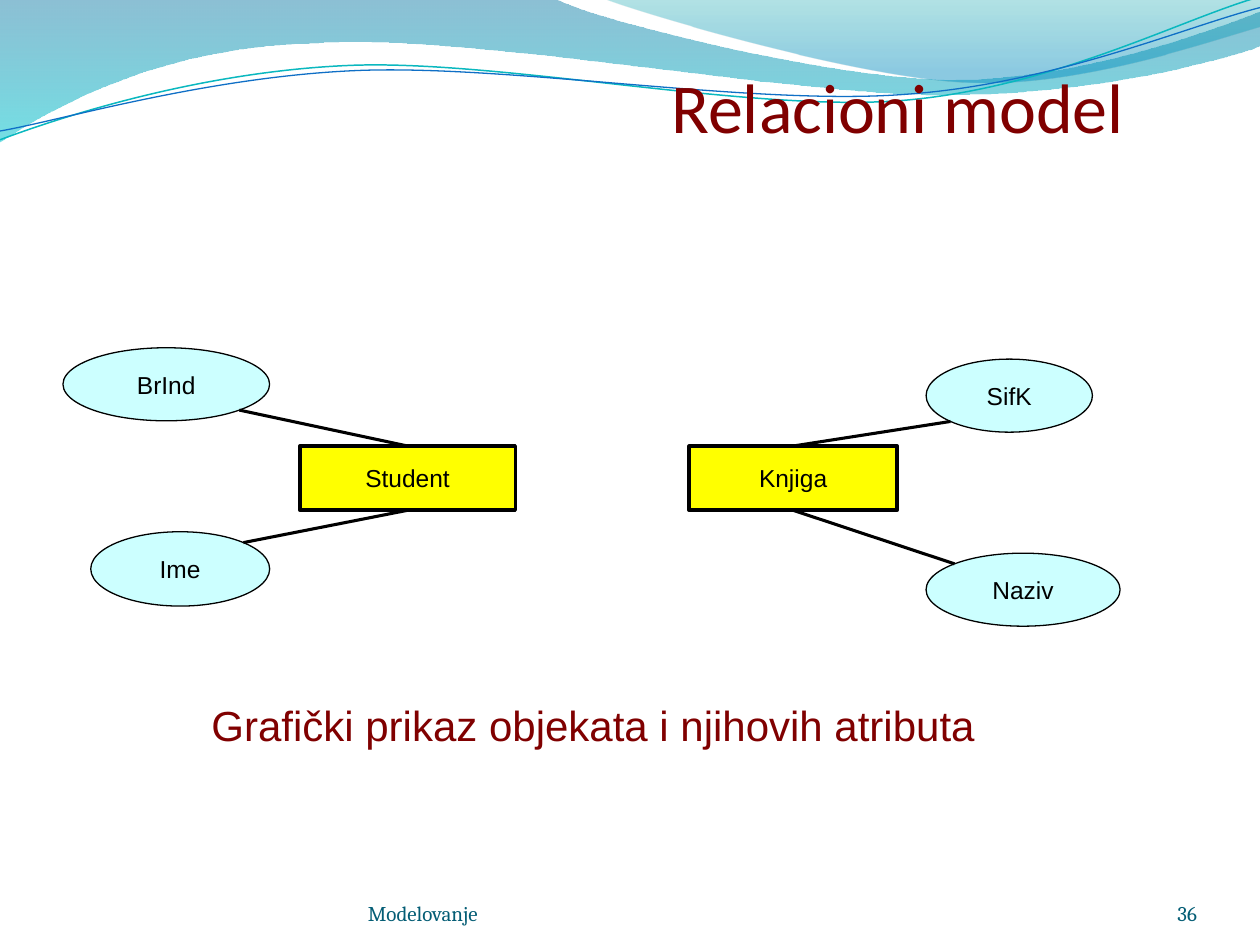
from math import cos, radians, sin, sqrt

from lxml import etree
from pptx import Presentation
from pptx.dml.color import RGBColor
from pptx.enum.shapes import MSO_CONNECTOR, MSO_SHAPE
from pptx.enum.text import MSO_ANCHOR, PP_ALIGN
from pptx.oxml.ns import qn
from pptx.util import Inches, Pt

RECTANGLE, ELLIPSE = MSO_SHAPE.RECTANGLE, MSO_SHAPE.OVAL
STRAIGHT = MSO_CONNECTOR.STRAIGHT
LEFT, CENTER, RIGHT = PP_ALIGN.LEFT, PP_ALIGN.CENTER, PP_ALIGN.RIGHT
MIDDLE, BOTTOM = MSO_ANCHOR.MIDDLE, MSO_ANCHOR.BOTTOM
TOP_SITE, BOTTOM_SITE = 0, 2
TILT = -2.7

BLACK = RGBColor(0x00, 0x00, 0x00)
MAROON = RGBColor(0x80, 0x00, 0x00)
TEAL = RGBColor(0x04, 0x5D, 0x75)
YELLOW = RGBColor(0xFF, 0xFF, 0x00)
PALE_CYAN = RGBColor(0xCC, 0xFF, 0xFF)
WAVE_BLUE = RGBColor(0x00, 0x74, 0xA1)
WAVE_CYAN = RGBColor(0x00, 0xC6, 0xCF)
WAVE_GREEN = RGBColor(0x00, 0xA1, 0xA9)
WAVE_SKY = RGBColor(0x00, 0x8B, 0xBF)
LINE_CYAN = RGBColor(0x0A, 0xB8, 0xBF)
LINE_BLUE = RGBColor(0x0F, 0x6F, 0xC6)

WAVES = [
    ((-0.01, -0.01, 10.02, 1.14),
     [(0, 0), (4.4, -0.01),
      (4.76, 0.17, 6.64, 0.63, 7.58, 0.63), (8.53, 0.63, 9.58, 0.26, 10, 0.09),
      (10.01, 0.36),
      (9.83, 0.44, 8.7, 0.76, 7.46, 0.75), (6.22, 0.75, 3.82, 0.28, 2.57, 0.34),
      (1.29, 0.36, 0.46, 0.83, -0.01, 1.13), (0, 0)],
     [(0, WAVE_BLUE, 45), (1, WAVE_CYAN, 55)]),
    ((4.79, -0.01, 5.21, 0.7),
     [(4.79, -0.01),
      (5.09, 0.11, 6.82, 0.62, 7.69, 0.65), (8.56, 0.69, 9.61, 0.32, 10, 0.21),
      (10, 0), (4.79, -0.01)],
     [(0, WAVE_GREEN, 30), (0.8, WAVE_SKY, 45)]),
]
WAVE_LINES = [
    ((-0.02, 0.22, 10.02, 0.71),
     [(0, 1.11), (0.48, 0.93, 1.58, 0.57, 2.77, 0.52),
      (3.95, 0.47, 5.93, 0.89, 7.13, 0.8), (8.33, 0.71, 9.38, 0.15, 9.98, -0.02)],
     LINE_CYAN, 0.85),
    ((-0.02, 0.3, 10.03, 0.58),
     [(0, 1.04), (0.47, 0.96, 1.64, 0.61, 2.83, 0.56),
      (4.03, 0.51, 5.97, 0.84, 7.17, 0.75), (8.36, 0.67, 9.41, 0.21, 10, 0.06)],
     LINE_BLUE, 0.75),
]
TITLE = {"size": Pt(40), "name": "Calibri", "color": MAROON}
FOOTER = {"size": Pt(12), "name": "Cambria", "color": TEAL}
CAPTION = {"size": Pt(24), "name": "Arial", "color": MAROON}
LABEL = {"size": Pt(14), "name": "Arial", "color": BLACK}
TEXTS = [
    ("Relacioni model", (5.33, 0, 4.67, 1.17), TITLE, LEFT, BOTTOM, (0, 0.05, 0, 0)),
    ("Modelovanje", (2.92, 6.95, 3.67, 0.4), FOOTER, LEFT, BOTTOM, (0, 0, 0, 0)),
    ("36", (8.67, 6.95, 0.83, 0.4), FOOTER, RIGHT, BOTTOM, (0, 0, 0, 0)),
    ("Grafički prikaz objekata i njihovih atributa", (1.58, 5.5, 6.67, 0.5),
     CAPTION, LEFT, MIDDLE, (0.1, 0.05, 0.1, 0.05)),
]
ENTITIES = [
    ("Student", (2.38, 3.54, 1.71, 0.51),
     [("BrInd", (0.5, 2.76, 1.64, 0.58)), ("Ime", (0.72, 4.22, 1.42, 0.59))]),
    ("Knjiga", (5.47, 3.54, 1.65, 0.51),
     [("SifK", (7.35, 2.85, 1.32, 0.58)), ("Naziv", (7.35, 4.39, 1.54, 0.58))]),
]


def set_values(target, values):
    for name, value in values.items():
        setattr(target, name, value)


def write_text(shape, text, style, alignment, anchor, insets):
    frame = shape.text_frame
    left, top, right, bottom = map(Inches, insets)
    set_values(frame, {"word_wrap": True, "vertical_anchor": anchor,
                       "margin_left": left, "margin_top": top,
                       "margin_right": right, "margin_bottom": bottom})
    paragraph = frame.paragraphs[0]
    paragraph.alignment = alignment
    run = paragraph.add_run()
    run.text = text
    set_values(run.font, {name: style[name] for name in ("size", "name")})
    run.font.color.rgb = style["color"]


def add_text(slide, text, box, *text_format):
    shape = slide.shapes.add_textbox(*map(Inches, box))
    write_text(shape, text, *text_format)


def local_points(segment, box, rotation):
    left, top, width, height = box
    angle = radians(-rotation)
    for x, y in zip(segment[::2], segment[1::2]):
        across, down = x - left - width / 2, y - top - height / 2
        yield (Inches(width / 2 + across * cos(angle) - down * sin(angle)),
               Inches(height / 2 + across * sin(angle) + down * cos(angle)))


def add_outline(slide, box, segments, close, rotation=0):
    pieces = [list(local_points(segment, box, rotation)) for segment in segments]
    builder = slide.shapes.build_freeform(*pieces[0][-1])
    builder.add_line_segments([piece[-1] for piece in pieces[1:]], close=close)
    shape = builder.convert_to_shape()
    left, top, width, height = map(Inches, box)
    set_values(shape, {"left": left, "top": top, "width": width,
                       "height": height, "rotation": rotation})
    outline = next(shape._element.iter(qn("a:path")))
    outline.set("w", str(width))
    outline.set("h", str(height))
    for element, piece in zip(list(outline), pieces):
        for point in list(element):
            element.remove(point)
        if len(piece) == 3:
            element.tag = qn("a:cubicBezTo")
        for x, y in piece:
            etree.SubElement(element, qn("a:pt"), x=str(x), y=str(y))
    shape.shadow.inherit = False
    return shape


def add_wave(slide, box, segments, stops):
    shape = add_outline(slide, box, segments, True)
    shape.line.fill.background()
    shape.fill.gradient()
    shape.fill.gradient_angle = 270
    for stop, (position, color, _) in zip(shape.fill.gradient_stops, stops):
        stop.position = position
        stop.color.rgb = color
    colors = shape._element.spPr.iter(qn("a:srgbClr"))
    for element, (_, _, opacity) in zip(colors, stops):
        etree.SubElement(element, qn("a:alpha")).set("val", str(opacity * 1000))


def add_wave_line(slide, box, segments, color, width):
    shape = add_outline(slide, box, segments, False, TILT)
    shape.fill.background()
    shape.line.color.rgb = color
    shape.line.width = Pt(width)


def add_node(slide, kind, text, box, fill, line_width):
    shape = slide.shapes.add_shape(kind, *map(Inches, box))
    shape.shadow.inherit = False
    shape.fill.solid()
    shape.fill.fore_color.rgb = fill
    shape.line.color.rgb = BLACK
    shape.line.width = Pt(line_width)
    write_text(shape, text, LABEL, CENTER, MIDDLE, (0.09, 0.04, 0.09, 0.04))
    return shape


def diagonal_point(ellipse, entity):
    def toward(start, length, other_start, other_length):
        center = start + length / 2
        side = 1 if other_start + other_length / 2 > center else -1
        return round(center + side * length / 2 / sqrt(2))

    return (toward(ellipse.left, ellipse.width, entity.left, entity.width),
            toward(ellipse.top, ellipse.height, entity.top, entity.height))


def add_link(slide, entity, attribute):
    end = diagonal_point(attribute, entity)
    connector = slide.shapes.add_connector(STRAIGHT, entity.left, entity.top, *end)
    site = TOP_SITE if attribute.top < entity.top else BOTTOM_SITE
    connector.begin_connect(entity, site)
    connector.line.color.rgb = BLACK
    connector.line.width = Pt(1.75)
    etree.SubElement(connector._element.spPr, qn("a:effectLst"))


def add_entity(slide, text, box, attributes):
    entity = add_node(slide, RECTANGLE, text, box, YELLOW, 2)
    for name, attribute_box in attributes:
        attribute = add_node(slide, ELLIPSE, name, attribute_box, PALE_CYAN, 0.75)
        add_link(slide, entity, attribute)


def main():
    presentation = Presentation()
    presentation.slide_width = Inches(10)
    presentation.slide_height = Inches(7.5)
    slide = presentation.slides.add_slide(presentation.slide_layouts[6])
    for wave in WAVES:
        add_wave(slide, *wave)
    for wave_line in WAVE_LINES:
        add_wave_line(slide, *wave_line)
    for text in TEXTS:
        add_text(slide, *text)
    for entity in ENTITIES:
        add_entity(slide, *entity)
    presentation.save("out.pptx")


if __name__ == "__main__":
    main()
